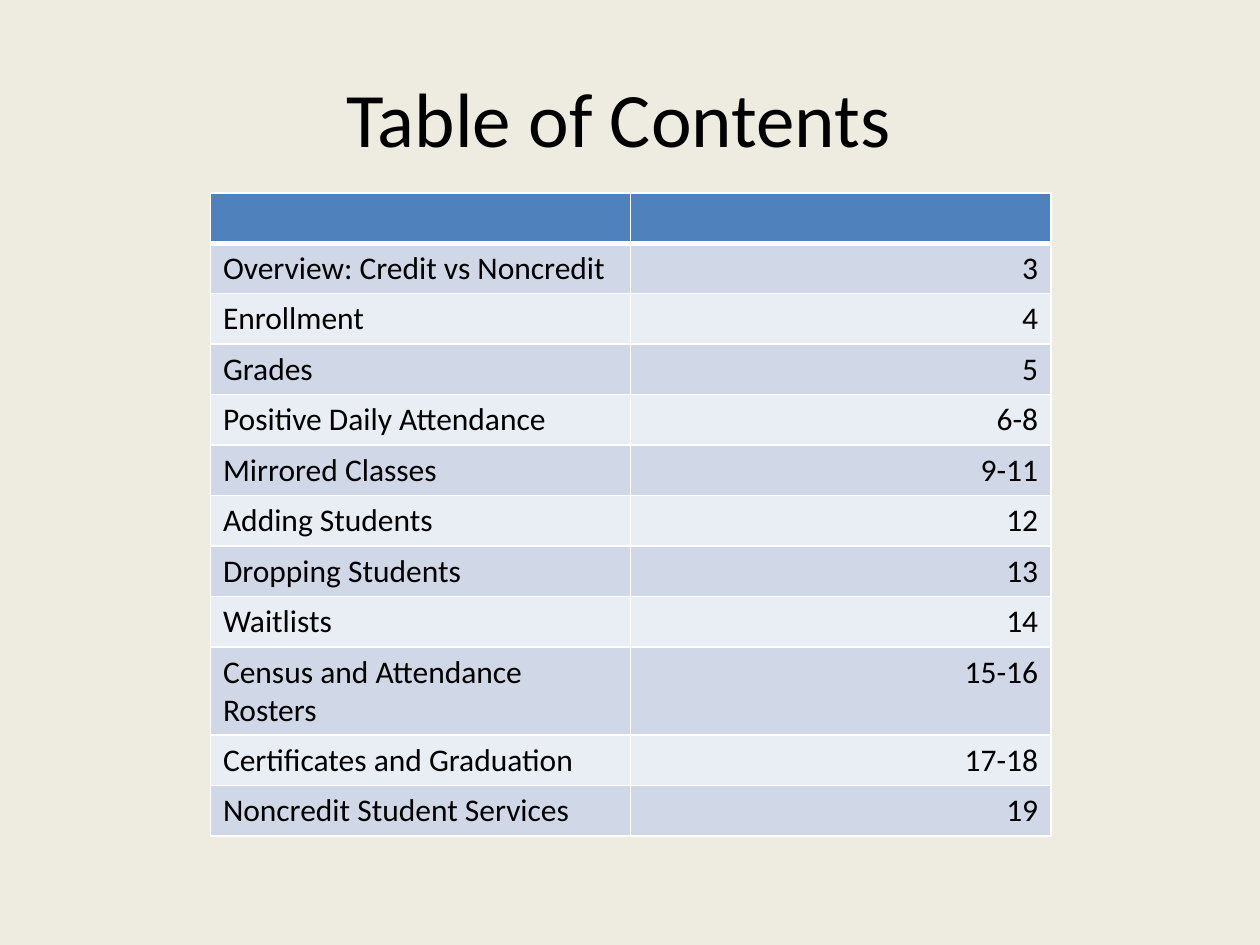
from lxml import etree
from pptx import Presentation
from pptx import util as u
from pptx.dml.color import RGBColor
from pptx.enum import text
from pptx.oxml import ns

WHITE, BLACK, HEADER = "FFFFFF", "000000", "4F81BD"
BANDS = ("D0D8E8", "E9EDF4")
CONTENTS = [
    ("Overview: Credit vs Noncredit", "3"),
    ("Enrollment", "4"),
    ("Grades", "5"),
    ("Positive Daily Attendance", "6-8"),
    ("Mirrored Classes", "9-11"),
    ("Adding Students", "12"),
    ("Dropping Students", "13"),
    ("Waitlists", "14"),
    ("Census and Attendance Rosters", "15-16"),
    ("Certificates and Graduation", "17-18"),
    ("Noncredit Student Services", "19"),
]


def color(value):
    return RGBColor.from_string(value)


class PageBuilder:
    """Holds the text style and the current slide."""

    def __init__(self, page, font="Calibri"):
        self.page = page
        self.font = font

    def background(self, fill):
        self.page.background.fill.solid()
        self.page.background.fill.fore_color.rgb = color(fill)

    def add_words(self, frame, words, size, align):
        para = frame.paragraphs[0]
        para.alignment = align
        span = para.add_run()
        span.text = words
        for name, value in {"name": self.font, "size": u.Pt(size)}.items():
            setattr(span.font, name, value)
        span.font.color.rgb = color(BLACK)

    def title(self, words, left, top, width, height):
        box = self.page.shapes.add_textbox(*map(u.Inches, (left, top, width, height)))
        frame = box.text_frame
        layout = {"word_wrap": True, "vertical_anchor": text.MSO_ANCHOR.MIDDLE}
        for name, value in layout.items():
            setattr(frame, name, value)
        self.add_words(frame, words, 44, text.PP_ALIGN.CENTER)

    def borders(self, cell, bottom):
        """Draw white lines, the bottom one with its own width in points."""
        properties = cell._tc.get_or_add_tcPr()
        for side, points in {"lnL": 1, "lnR": 1, "lnT": 1, "lnB": bottom}.items():
            line = etree.SubElement(properties, ns.qn(f"a:{side}"), w=str(u.Pt(points)))
            fill = etree.SubElement(line, ns.qn("a:solidFill"))
            etree.SubElement(fill, ns.qn("a:srgbClr"), val=WHITE)

    def cell(self, cell, fill, bottom=1):
        self.borders(cell, bottom)
        cell.fill.solid()
        cell.fill.fore_color.rgb = color(fill)

    def contents_table(self, rows, left, top, width, row_height):
        """Place an empty header row above banded rows of topic and pages."""
        count = len(rows) + 1
        size = map(u.Inches, (left, top, width, row_height * count))
        table = self.page.shapes.add_table(count, 2, *size).table
        for header in table.rows[0].cells:
            self.cell(header, HEADER, bottom=3)
        aligns = (text.PP_ALIGN.LEFT, text.PP_ALIGN.RIGHT)
        for number, entry in enumerate(rows):
            for column, (words, align) in enumerate(zip(entry, aligns)):
                cell = table.cell(number + 1, column)
                self.cell(cell, BANDS[number % 2])
                self.add_words(cell.text_frame, words, 18, align)


def main():
    deck = Presentation()
    deck.slide_width, deck.slide_height = u.Inches(10), u.Inches(7.5)
    builder = PageBuilder(deck.slides.add_slide(deck.slide_layouts[6]))
    builder.background("EEECE1")
    builder.title("Table of Contents\t", 0.5, 0.3, 9, 1.25)
    builder.contents_table(CONTENTS, 1.67, 1.53, 6.67, 0.4)
    deck.save("out.pptx")


if __name__ == "__main__":
    main()
